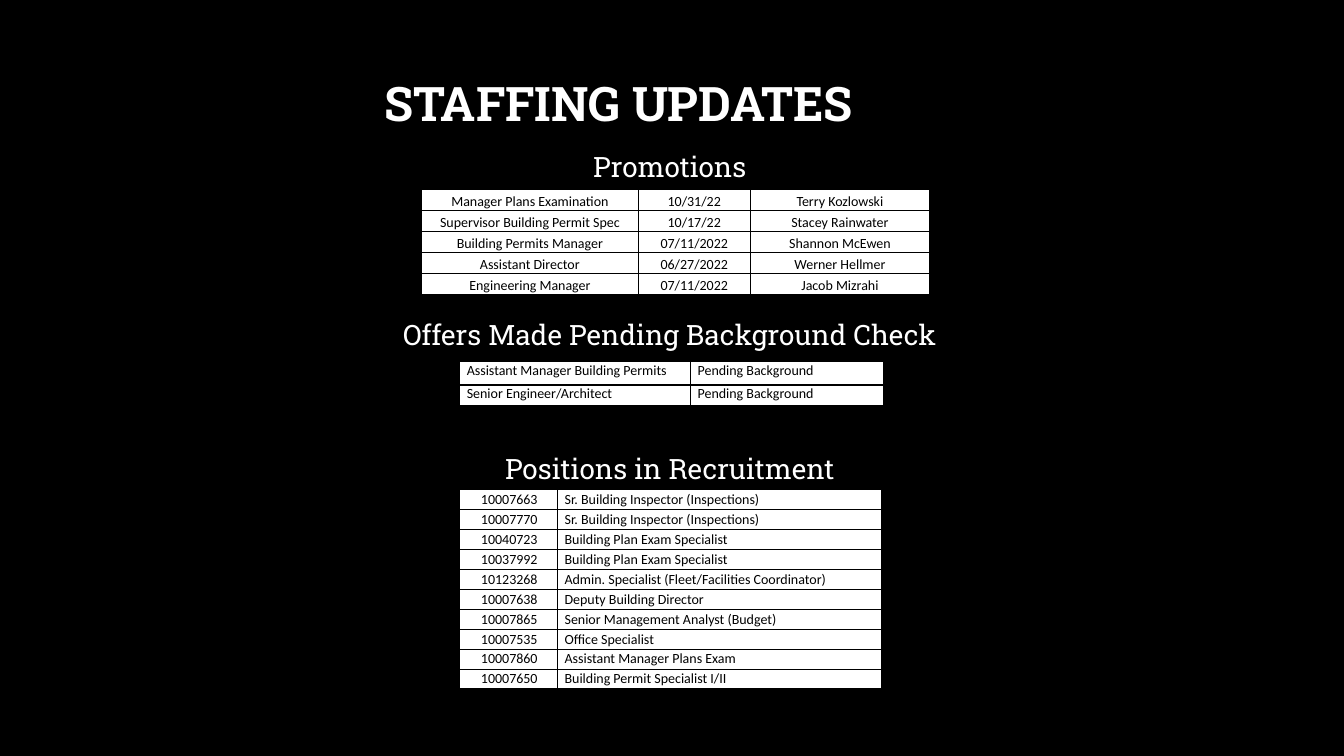
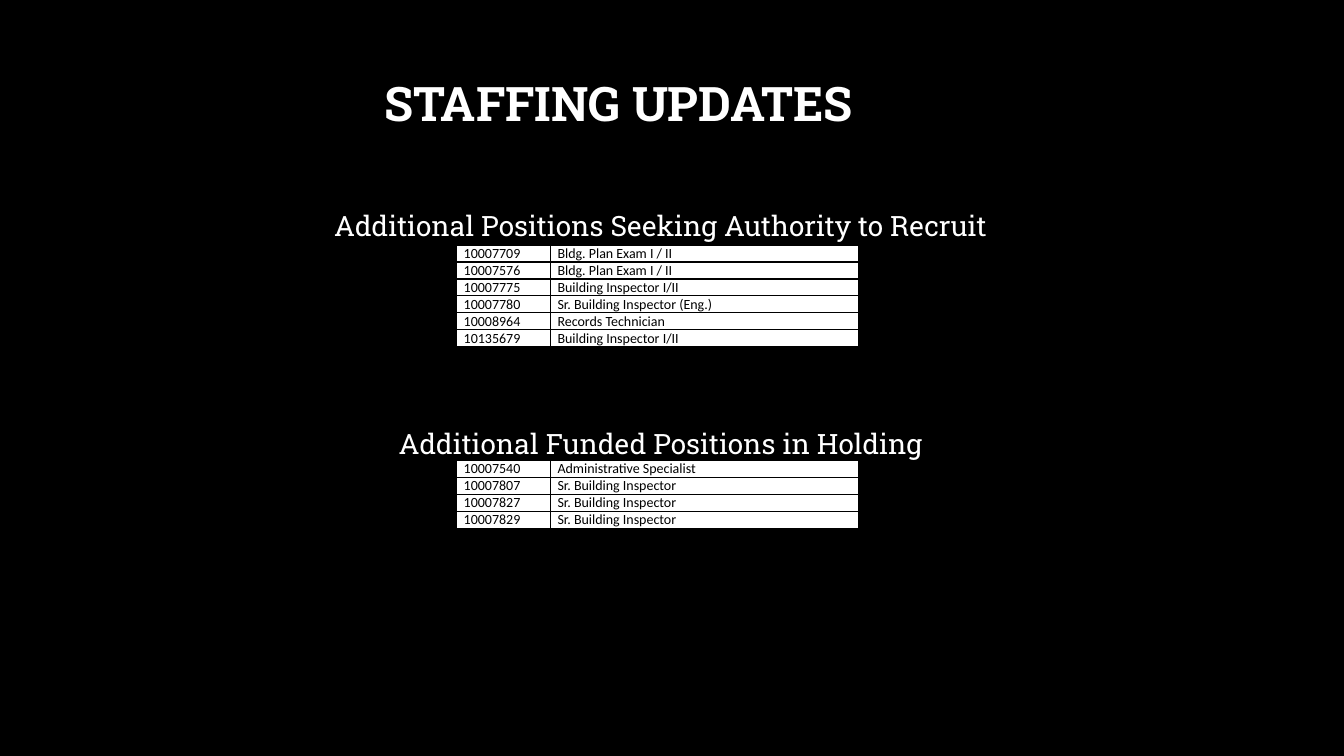
"""Build two staffing update slides with headed tables on a black background."""
from lxml import etree
from pptx import Presentation
from pptx import util as u
from pptx.dml.color import RGBColor
from pptx.enum import text
from pptx.oxml import ns

COLORS = {"background": "000000", "light": "FFFFFF", "dark": "000000"}
HEADING_FONT, TABLE_FONT = "Roboto Slab", "Calibri"
TITLE = "STAFFING UPDATES"
TITLE_BOX = (1.88, 4.13, 88.3, 19.73)
HEADING_WIDTH, HEADING_HEIGHT = 81, 5.4
LEFT, CENTER = text.PP_ALIGN.LEFT, text.PP_ALIGN.CENTER
TOP, MIDDLE, BOTTOM = text.MSO_ANCHOR.TOP, text.MSO_ANCHOR.MIDDLE, text.MSO_ANCHOR.BOTTOM

presentation = Presentation()
presentation.slide_width = u.Inches(13.33)
presentation.slide_height = u.Inches(7.5)
COLUMN = presentation.slide_width / 100
ROW = presentation.slide_height / 100
background = presentation.slide_master.background.fill
background.solid()
background.fore_color.rgb = RGBColor.from_string(COLORS["background"])

promotions = [
    ("Manager Plans Examination", "10/31/22", "Terry Kozlowski"),
    ("Supervisor Building Permit Spec", "10/17/22", "Stacey Rainwater"),
    ("Building Permits Manager", "07/11/2022", "Shannon McEwen"),
    ("Assistant Director", "06/27/2022", "Werner Hellmer"),
    ("Engineering Manager", "07/11/2022", "Jacob Mizrahi"),
]
offers = [
    ("Assistant Manager Building Permits", "Pending Background"),
    ("Senior Engineer/Architect", "Pending Background"),
]
recruitment = [
    ("10007663", "Sr. Building Inspector (Inspections)"),
    ("10007770", "Sr. Building Inspector (Inspections)"),
    ("10040723", "Building Plan Exam Specialist"),
    ("10037992", "Building Plan Exam Specialist"),
    ("10123268", "Admin. Specialist (Fleet/Facilities Coordinator)"),
    ("10007638", "Deputy Building Director"),
    ("10007865", "Senior Management Analyst (Budget)"),
    ("10007535", "Office Specialist"),
    ("10007860", "Assistant Manager Plans Exam"),
    ("10007650", "Building Permit Specialist I/II"),
]
seeking_authority = [
    ("10007709", "Bldg. Plan Exam I / II"),
    ("10007576", "Bldg. Plan Exam I / II"),
    ("10007775", "Building Inspector I/II"),
    ("10007780", "Sr. Building Inspector (Eng.)"),
    ("10008964", "Records Technician"),
    ("10135679", "Building Inspector I/II"),
]
holding = [
    ("10007540", "Administrative Specialist"),
    ("10007807", "Sr. Building Inspector"),
    ("10007827", "Sr. Building Inspector"),
    ("10007829", "Sr. Building Inspector"),
]

SLIDES = [
    (49.84, [
        dict(heading="Promotions", middle=22, at=(31.36, 25.07), widths=(16.13, 8.33, 13.35),
             heights=[2.77] * 5, rows=promotions, align=CENTER, anchor=BOTTOM, indent=0),
        dict(heading="Offers Made Pending Background Check", middle=44.2, at=(34.21, 47.87),
             widths=(17.18, 14.33), heights=[3.07, 2.67], rows=offers,
             align=LEFT, anchor=TOP, indent=0),
        dict(heading="Positions in Recruitment", middle=62, at=(34.21, 64.8),
             widths=(7.28, 24.08), heights=[2.64] * 10, rows=recruitment,
             align=LEFT, anchor=MIDDLE, indent=0.14),
    ]),
    (49.16, [
        dict(heading="Additional Positions Seeking Authority to Recruit", middle=29.8,
             at=(33.98, 32.4), widths=(6.98, 22.96), heights=[2.25] * 6,
             rows=seeking_authority, align=LEFT, anchor=MIDDLE, indent=0),
        dict(heading="Additional Funded Positions in Holding", middle=58.6,
             at=(33.98, 60.93), widths=(6.98, 22.96), heights=[2.25] * 4,
             rows=holding, align=LEFT, anchor=MIDDLE, indent=0),
    ]),
]


def place(left, top, width, height):
    """Turn grid columns and rows into slide lengths."""
    return [round(length) for length in (left * COLUMN, top * ROW, width * COLUMN, height * ROW)]


def write(frame, content, font, size, color, align, bold=False):
    """Write one formatted paragraph into a text frame."""
    frame.text = content
    frame.word_wrap = True
    paragraph = frame.paragraphs[0]
    paragraph.alignment = align
    run = paragraph.runs[0]
    run.font.name, run.font.size, run.font.bold = font, u.Pt(size), bold
    run.font.color.rgb = RGBColor.from_string(COLORS[color])


for heading_center, sections in SLIDES:
    slide = presentation.slides.add_slide(presentation.slide_layouts[5])
    title = slide.shapes.title
    title.left, title.top, title.width, title.height = place(*TITLE_BOX)
    write(title.text_frame, TITLE, HEADING_FONT, 34, "light", CENTER, bold=True)
    title.text_frame.vertical_anchor = MIDDLE
    title.text_frame.paragraphs[0].line_spacing = 0.9

    for section in sections:
        heading = slide.shapes.add_textbox(*place(
            heading_center - HEADING_WIDTH / 2, section["middle"] - HEADING_HEIGHT / 2,
            HEADING_WIDTH, HEADING_HEIGHT))
        write(heading.text_frame, section["heading"], HEADING_FONT, 20, "light", CENTER)
        heading.text_frame.vertical_anchor = MIDDLE

        widths, heights = section["widths"], section["heights"]
        table = slide.shapes.add_table(
            len(heights), len(widths),
            *place(*section["at"], sum(widths), sum(heights))).table
        table.first_row = table.horz_banding = False
        for column, width in zip(table.columns, widths):
            column.width = round(width * COLUMN)
        for row, height, contents in zip(table.rows, heights, section["rows"]):
            row.height = round(height * ROW)
            for index, (cell, content) in enumerate(zip(row.cells, contents)):
                write(cell.text_frame, content, TABLE_FONT, 10, "dark", section["align"])
                cell.vertical_anchor = section["anchor"]
                cell.margin_left = u.Inches(0.07 + (section["indent"] if index == 0 else 0))
                cell.margin_right = u.Inches(0.07)
                cell.margin_top = cell.margin_bottom = 0
                properties = cell._tc.get_or_add_tcPr()
                for side in ("a:lnL", "a:lnR", "a:lnT", "a:lnB"):
                    border = etree.SubElement(properties, ns.qn(side), w=str(u.Pt(1)))
                    line_fill = etree.SubElement(border, ns.qn("a:solidFill"))
                    etree.SubElement(line_fill, ns.qn("a:srgbClr"), val=COLORS["dark"])
                cell.fill.solid()
                cell.fill.fore_color.rgb = RGBColor.from_string(COLORS["light"])

presentation.save("out.pptx")
